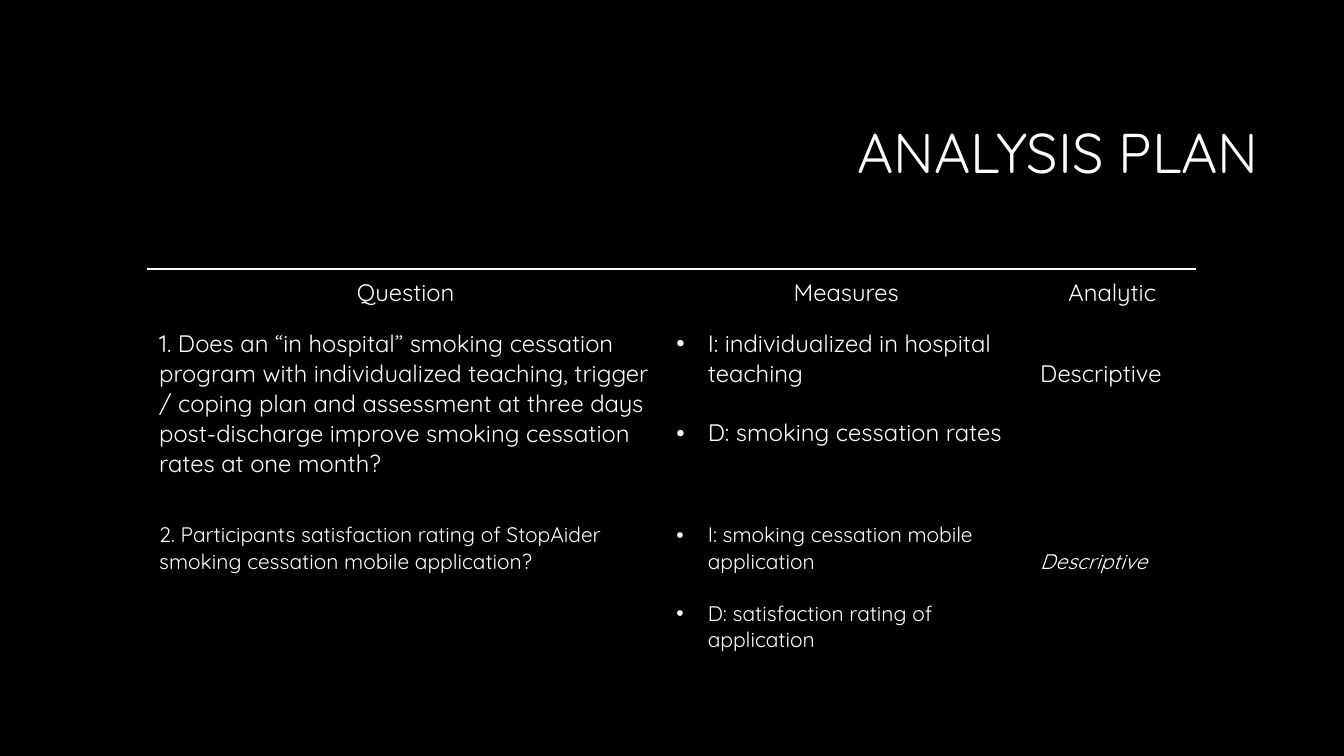
"""Build the analysis plan slide with its table of questions and measures."""
import pptx
import pptx.dml.color
import pptx.enum.text
import pptx.oxml
import pptx.oxml.ns
import pptx.util

Pt = pptx.util.Pt
Align = pptx.enum.text.PP_ALIGN
WHITE = pptx.dml.color.RGBColor(0xFF, 0xFF, 0xFF)
BLACK = pptx.dml.color.RGBColor(0x00, 0x00, 0x00)
FONT = "Quicksand"
LINE_RATIO = 1.25
BULLET_INDENT = 22.5
SIDE_MARGIN, EDGE_MARGIN = 8.64, 6.48

COLUMN_WIDTHS = [369.4, 259.9, 120.2]
ROW_HEIGHTS = [36, 138.2, 103.7]
HEADINGS = ["Question", "Measures", "Analytic"]
STUDY_ROWS = [
    (17, False,
     "1. Does an “in hospital” smoking cessation program with individualized "
     "teaching, trigger / coping plan and assessment at three days "
     "post-discharge improve smoking cessation rates at one month?",
     ["I: individualized in hospital teaching", "D: smoking cessation rates"],
     "Descriptive"),
    (15, True,
     "2. Participants satisfaction rating of StopAider smoking cessation "
     "mobile application?",
     ["I: smoking cessation mobile application",
      "D: satisfaction rating of application"],
     "Descriptive"),
]


class PlanPage:
    def __init__(self, deck):
        self.page = deck.slides.add_slide(deck.slide_layouts[5])
        self.page.background.fill.solid()
        self.page.background.fill.fore_color.rgb = BLACK

    def span(self, para, text, size, italic=False):
        span = para.add_run()
        span.text = text
        span.font.name = FONT
        span.font.size = Pt(size)
        span.font.bold = False
        span.font.italic = italic
        span.font.color.rgb = WHITE

    def title(self, text, left, top, width, height):
        box = self.page.shapes.title
        box.left, box.top, box.width, box.height = map(Pt, (left, top, width, height))
        box.text_frame.word_wrap = True
        box.text_frame.vertical_anchor = pptx.enum.text.MSO_ANCHOR.MIDDLE
        para = box.text_frame.paragraphs[0]
        para.alignment = Align.RIGHT
        para.line_spacing = 0.9
        self.span(para, text, 40)

    def table(self, left, top):
        frame = self.page.shapes.add_table(
            len(ROW_HEIGHTS), len(COLUMN_WIDTHS), Pt(left), Pt(top),
            Pt(sum(COLUMN_WIDTHS)), Pt(sum(ROW_HEIGHTS)))
        table = frame.table
        table.first_row = table.horz_banding = False
        for column, width in zip(table.columns, COLUMN_WIDTHS):
            column.width = Pt(width)
        for row, height in zip(table.rows, ROW_HEIGHTS):
            row.height = Pt(height)
        return table

    def borders(self, cell, top_width):
        properties = cell._tc.get_or_add_tcPr()
        for side in ("lnL", "lnR", "lnT", "lnB"):
            visible = side == "lnT" and top_width
            width = Pt(top_width) if visible else 0
            paint = (f'<a:solidFill><a:srgbClr val="{WHITE}"/></a:solidFill>'
                     if visible else "<a:noFill/>")
            properties.append(pptx.oxml.parse_xml(
                f'<a:{side} {pptx.oxml.ns.nsdecls("a")} w="{width}">{paint}</a:{side}>'))

    def bullet(self, para):
        properties = para._p.get_or_add_pPr()
        properties.set("marL", str(Pt(BULLET_INDENT)))
        properties.set("indent", str(-Pt(BULLET_INDENT)))
        for tag in ('buFont typeface="Arial"', 'buChar char="•"'):
            properties.append(pptx.oxml.parse_xml(
                f'<a:{tag} {pptx.oxml.ns.nsdecls("a")}/>'))

    def cell(self, cell, texts, size, align=Align.LEFT, bullets=False,
             italic=False, top_width=0, filled=False, lines_above=0):
        line = size * LINE_RATIO
        self.borders(cell, top_width)
        if filled:
            cell.fill.solid()
            cell.fill.fore_color.rgb = BLACK
        else:
            cell.fill.background()
        cell.margin_left = cell.margin_right = Pt(SIDE_MARGIN)
        cell.margin_top = Pt(EDGE_MARGIN + lines_above * line)
        cell.margin_bottom = Pt(EDGE_MARGIN)
        for index, text in enumerate(texts):
            box = cell.text_frame
            para = box.add_paragraph() if index else box.paragraphs[0]
            para.alignment = align
            if index:
                para.space_before = Pt(line)
            if bullets:
                self.bullet(para)
            self.span(para, text, size, italic)


def main():
    deck = pptx.Presentation()
    deck.slide_width, deck.slide_height = Pt(960), Pt(540)
    plan = PlanPage(deck)
    plan.title("ANALYSIS PLAN", 228.2, 60.5, 678.2, 101.5)
    table = plan.table(105.1, 192.2)
    for column, heading in enumerate(HEADINGS):
        plan.cell(table.cell(0, column), [heading], 17, Align.CENTER, top_width=2.25)
    for row, (size, second, question, measures, analytic) in enumerate(STUDY_ROWS, 1):
        plan.cell(table.cell(row, 0), [question], size, filled=second)
        plan.cell(table.cell(row, 1), measures, size, bullets=True, filled=second)
        plan.cell(table.cell(row, 2), [analytic], size, italic=second,
                  filled=second, lines_above=1)
    deck.save("out.pptx")


if __name__ == "__main__":
    main()
